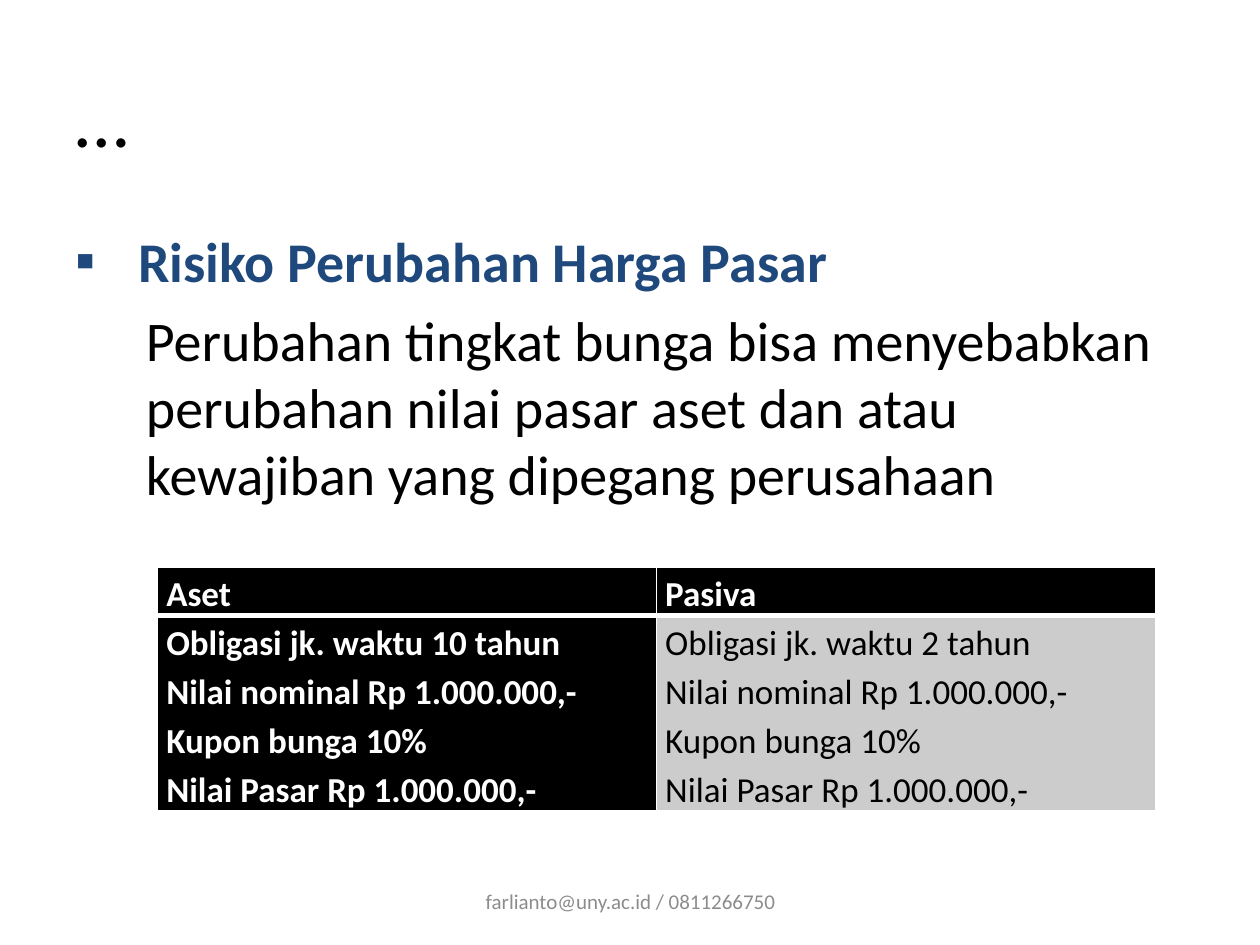
import dataclasses
import typing

import pptx
import pptx.dml.color
import pptx.enum.text
import pptx.oxml
import pptx.oxml.ns
import pptx.util

Inches = pptx.util.Inches
Pt = pptx.util.Pt
ALIGN = pptx.enum.text.PP_ALIGN
ANCHOR = pptx.enum.text.MSO_ANCHOR


@dataclasses.dataclass(frozen=True)
class Theme:
    font: str = "Calibri"
    black: str = "000000"
    white: str = "FFFFFF"
    navy: str = "1F497D"
    gray: str = "CCCCCC"
    muted: str = "8C8C8C"
    title: int = 44
    body: int = 32
    cell: int = 20
    foot: int = 12


THEME = Theme()


@dataclasses.dataclass(frozen=True)
class Para:
    text: str
    size: int
    color: str = THEME.black
    bold: bool = False
    align: ALIGN = ALIGN.LEFT
    before: float = 0
    left: float = 0
    hang: float = 0
    bullet: str = ""
    line: float = 1.0


@dataclasses.dataclass(frozen=True)
class Box:
    left: float
    top: float
    width: float
    height: float
    anchor: ANCHOR
    paras: tuple[Para, ...]


@dataclasses.dataclass(frozen=True)
class Cell:
    lines: tuple[str, ...]
    fill: str
    color: str
    bold: bool


def rgb(code: str) -> pptx.dml.color.RGBColor:
    return pptx.dml.color.RGBColor.from_string(code)


def make(xml: str) -> typing.Any:
    space = pptx.oxml.ns.nsdecls("a")
    return pptx.oxml.parse_xml(xml.replace(" NS", " " + space, 1))


def write(frame: typing.Any, paras: typing.Iterable[Para]) -> None:
    for i, item in enumerate(paras):
        para = frame.add_paragraph() if i else frame.paragraphs[0]
        para.alignment = item.align
        para.line_spacing = item.line
        para.space_before = Pt(item.before)
        props = para._p.get_or_add_pPr()
        props.set("marL", str(Inches(item.left)))
        props.set("indent", str(Inches(-item.hang)))
        if item.bullet:
            props.append(make(f'<a:buFont NS typeface="{THEME.font}"/>'))
            props.append(make(f'<a:buChar NS char="{item.bullet}"/>'))
        run = para.add_run()
        run.text = item.text
        run.font.name = THEME.font
        run.font.size = Pt(item.size)
        run.font.bold = item.bold
        run.font.color.rgb = rgb(item.color)


def draw(slide: typing.Any, box: Box) -> None:
    shape = slide.shapes.add_textbox(
        Inches(box.left), Inches(box.top), Inches(box.width), Inches(box.height))
    frame = shape.text_frame
    frame.word_wrap = True
    frame.vertical_anchor = box.anchor
    write(frame, box.paras)


def edge(cell: typing.Any, widths: dict[str, int]) -> None:
    props = cell._tc.get_or_add_tcPr()
    for i, (side, width) in enumerate(widths.items()):
        props.insert(i, make(
            f'<a:ln{side} NS w="{Pt(width)}"><a:solidFill>'
            f'<a:srgbClr val="{THEME.white}"/></a:solidFill></a:ln{side}>'))


def grid(slide: typing.Any, rows: list[list[Cell]]) -> None:
    widths, heights = (3.96, 3.96), (0.37, 1.55)
    table = slide.shapes.add_table(
        len(rows), len(widths), Inches(1.25), Inches(4.5),
        Inches(sum(widths)), Inches(sum(heights))).table
    for col, width in zip(table.columns, widths):
        col.width = Inches(width)
    for r, row in enumerate(rows):
        table.rows[r].height = Inches(heights[r])
        for c, item in enumerate(row):
            cell = table.cell(r, c)
            cell.margin_left = cell.margin_right = Inches(0.07)
            cell.margin_top = cell.margin_bottom = 0
            cell.fill.solid()
            cell.fill.fore_color.rgb = rgb(item.fill)
            # The rule under the header is thicker
            edge(cell, {"L": 1, "R": 1, "T": 3 if r else 1, "B": 1 if r else 3})
            write(cell.text_frame, [
                Para(text, THEME.cell, item.color, item.bold, line=1.15)
                for text in item.lines])


def terms(years: int) -> tuple[str, ...]:
    return (f"Obligasi jk. waktu {years} tahun", "Nilai nominal Rp 1.000.000,-",
            "Kupon bunga 10%", "Nilai Pasar Rp 1.000.000,-")


def main() -> None:
    deck = pptx.Presentation()
    deck.slide_width, deck.slide_height = Inches(10), Inches(7.5)
    slide = deck.slides.add_slide(deck.slide_layouts[6])

    # Title, body and footer
    gap = THEME.body * 0.2
    draw(slide, Box(0.5, 0.3, 9, 1.25, ANCHOR.MIDDLE, (Para("…", THEME.title),)))
    draw(slide, Box(0.5, 1.75, 9, 2.6, ANCHOR.TOP, (
        Para("Risiko Perubahan Harga Pasar", THEME.body, THEME.navy, True,
             left=0.5, hang=0.5, bullet="▪"),
        Para("Perubahan tingkat bunga bisa menyebabkan perubahan nilai pasar "
             "aset dan atau kewajiban yang dipegang perusahaan",
             THEME.body, before=gap, left=0.56))))
    draw(slide, Box(3.42, 6.95, 3.17, 0.4, ANCHOR.MIDDLE, (
        Para("farlianto@uny.ac.id / 0811266750", THEME.foot, THEME.muted,
             align=ALIGN.CENTER),)))

    # Balance table
    dark = (THEME.black, THEME.white, True)
    light = (THEME.gray, THEME.black, False)
    grid(slide, [
        [Cell(("Aset",), *dark), Cell(("Pasiva",), *dark)],
        [Cell(terms(10), *dark), Cell(terms(2), *light)]])

    deck.save("out.pptx")


if __name__ == "__main__":
    main()
